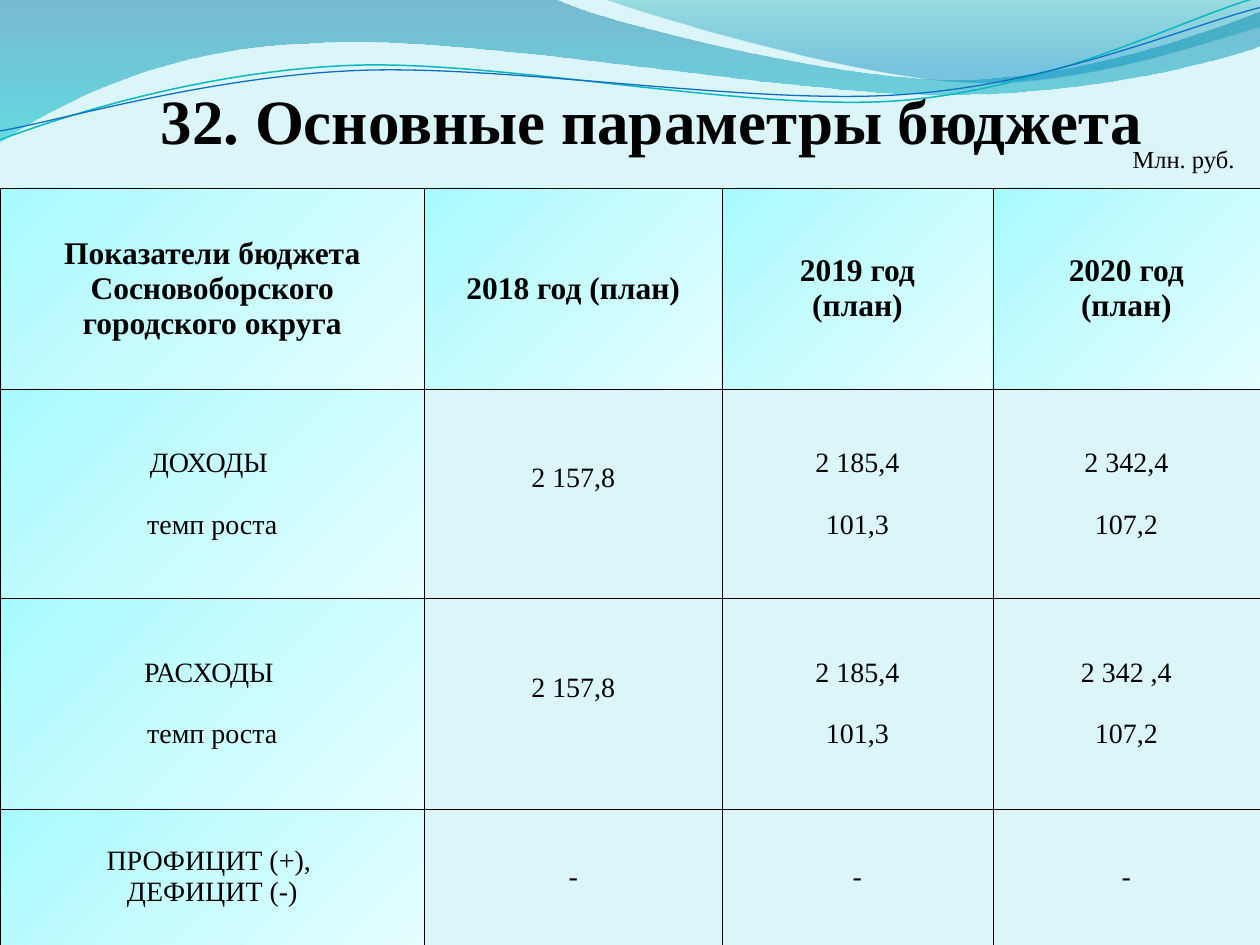
from dataclasses import dataclass
from math import cos, radians, sin

from lxml import etree
from pptx import Presentation
from pptx.dml.color import RGBColor
from pptx.enum.text import MSO_ANCHOR, PP_ALIGN
from pptx.oxml.ns import qn
from pptx.util import Inches, Pt

CENTER, LEFT = PP_ALIGN.CENTER, PP_ALIGN.LEFT
TOP, MIDDLE, BOTTOM = MSO_ANCHOR.TOP, MSO_ANCHOR.MIDDLE, MSO_ANCHOR.BOTTOM
WIDTH, HEIGHT = 10, 7.5


@dataclass(frozen=True)
class Theme:
    font: str = "Times New Roman"
    text: str = "000000"
    background: str = "DBF5F9"
    border: str = "000000"
    border_width: float = 0.25
    title_size: int = 36
    header_size: int = 18
    body_size: int = 16
    unit_size: int = 14
    # Gradient stops: position %, colour, opacity %
    cell: tuple = ((0, "A7FAFF", 100), (50, "C9FCFF", 100), (100, "E4FDFF", 100))
    left_wave: tuple = ((0, "0074A1", 45), (100, "00C6CF", 55))
    right_wave: tuple = ((0, "00A1A9", 30), (80, "008BBF", 45))
    teal_line: str = "0AB8BF"
    blue_line: str = "0F6FC6"


THEME = Theme()

# Content: each cell is a list of lines
TITLE = "32. Основные параметры бюджета"
UNIT = "Млн. руб."
HEADER = [["Показатели бюджета Сосновоборского городского округа"],
          ["2018 год (план)"], ["2019 год", "(план)"], ["2020 год", "(план)"]]
GROWTH_ROWS = [
    [["ДОХОДЫ ", "темп роста"], ["2 157,8"], ["2 185,4", "101,3"], ["2 342,4", "107,2"]],
    [["РАСХОДЫ ", "темп роста"], ["2 157,8"], ["2 185,4", "101,3"], ["2 342 ,4", "107,2"]],
]
BALANCE = [["ПРОФИЦИТ (+), ", "ДЕФИЦИТ (-)"], ["-"], ["-"], ["-"]]
TABLE_TOP = 1.49
COLUMNS = [3.37, 2.36, 2.15, 2.12]
ROWS = [1.6, 1.66, 1.67, 1.08]
GROWTH_GAP = 17.5   # points between an amount and its growth rate
SINGLE_LIFT = 0.25  # inches kept free under an amount without a growth rate

# Waves: a pair is a straight segment, six numbers are a Bezier segment
WAVES = [
    (THEME.left_wave, [
        (0, 0), (4.4, -0.01), (4.76, 0.17, 6.64, 0.63, 7.58, 0.63),
        (8.53, 0.63, 9.58, 0.26, 10, 0.09), (10.01, 0.36),
        (9.83, 0.44, 8.7, 0.76, 7.46, 0.75), (6.22, 0.75, 3.82, 0.28, 2.57, 0.34),
        (1.29, 0.36, 0.46, 0.83, -0.01, 1.13), (0, 0)]),
    (THEME.right_wave, [
        (4.79, -0.01), (5.09, 0.11, 6.82, 0.62, 7.69, 0.65),
        (8.56, 0.69, 9.61, 0.32, 10, 0.21), (10, 0), (4.79, -0.01)]),
]
LINE_TILT = -2.7
LINES = [
    (THEME.teal_line, 0.85, [
        (0, 1.11), (0.48, 0.93, 1.58, 0.57, 2.77, 0.52),
        (3.95, 0.47, 5.93, 0.89, 7.13, 0.8), (8.33, 0.71, 9.38, 0.15, 9.98, -0.02)]),
    (THEME.blue_line, 0.75, [
        (0, 1.04), (0.47, 0.96, 1.64, 0.61, 2.83, 0.56),
        (4.03, 0.51, 5.97, 0.84, 7.17, 0.75), (8.36, 0.67, 9.41, 0.21, 10, 0.06)]),
]


def color(value):
    return RGBColor.from_string(value)


def gradient(stops, angle):
    fill = etree.Element(qn("a:gradFill"), rotWithShape="1")
    stop_list = etree.SubElement(fill, qn("a:gsLst"))
    for position, value, opacity in stops:
        stop = etree.SubElement(stop_list, qn("a:gs"), pos=str(position * 1000))
        shade = etree.SubElement(stop, qn("a:srgbClr"), val=value)
        etree.SubElement(shade, qn("a:alpha"), val=str(opacity * 1000))
    etree.SubElement(fill, qn("a:lin"), ang=str(angle * 60000), scaled="0")
    return fill


def turn(point, center, degrees):
    c, s = cos(radians(degrees)), sin(radians(degrees))
    x, y = point[0] - center[0], point[1] - center[1]
    return center[0] + x * c - y * s, center[1] + x * s + y * c


def add_curve(page, segments, closed, tilt=0):
    """Draw the segments; a tilted curve is laid level first, then rotated."""
    center = (WIDTH / 2, 0.58)
    groups = [[tuple(map(Inches, turn(segment[i:i + 2], center, -tilt)))
               for i in range(0, len(segment), 2)] for segment in segments]
    ends = [group[-1] for group in groups]
    builder = page.shapes.build_freeform(*ends[0])
    builder.add_line_segments(ends[1:], close=closed)
    curve = builder.convert_to_shape()
    left, top = (min(axis) for axis in zip(*ends))
    for straight, group in zip(list(curve._element.iter(qn("a:lnTo"))), groups[1:]):
        if len(group) == 3:
            bend = etree.Element(qn("a:cubicBezTo"))
            for x, y in group:
                etree.SubElement(bend, qn("a:pt"), x=str(x - left), y=str(y - top))
            straight.getparent().replace(straight, bend)
    curve.rotation = tilt
    curve.shadow.inherit = False
    curve.fill.background()
    return curve


def write(frame, lines, size, bold=False, align=CENTER, gap=0):
    frame.word_wrap = True
    for index, line in enumerate(lines):
        para = frame.add_paragraph() if index else frame.paragraphs[0]
        para.alignment = align
        if index:
            para.space_before = Pt(gap)
        span = para.add_run()
        span.text = line
        span.font.name, span.font.size, span.font.bold = THEME.font, Pt(size), bold
        span.font.color.rgb = color(THEME.text)


def add_text(page, text, place, anchor=TOP, margins=(0.1, 0.05, 0.1, 0.05), **style):
    frame = page.shapes.add_textbox(*map(Inches, place)).text_frame
    frame.vertical_anchor = anchor
    (frame.margin_left, frame.margin_top,
     frame.margin_right, frame.margin_bottom) = map(Inches, margins)
    write(frame, [text], **style)


def style_cell(cell, shaded):
    cell.vertical_anchor = MIDDLE
    properties = cell._tc.get_or_add_tcPr()
    for side in ("lnL", "lnR", "lnT", "lnB"):
        edge = etree.SubElement(properties, qn(f"a:{side}"), w=str(Pt(THEME.border_width)))
        solid = etree.SubElement(edge, qn("a:solidFill"))
        etree.SubElement(solid, qn("a:srgbClr"), val=THEME.border)
    if shaded:
        properties.append(gradient(THEME.cell, 45))
    else:
        cell.fill.background()


def add_budget_table(page):
    rows = [HEADER, *GROWTH_ROWS, BALANCE]
    table = page.shapes.add_table(len(ROWS), len(COLUMNS), 0, Inches(TABLE_TOP),
                                  Inches(sum(COLUMNS)), Inches(sum(ROWS))).table
    table.first_row = table.horz_banding = False
    for column, width in zip(table.columns, COLUMNS):
        column.width = Inches(width)
    for row, height in zip(table.rows, ROWS):
        row.height = Inches(height)
    for r, row in enumerate(rows):
        header, growth = row is HEADER, row in GROWTH_ROWS
        for c, lines in enumerate(row):
            cell = table.cell(r, c)
            style_cell(cell, shaded=header or c == 0)
            write(cell.text_frame, lines, bold=header,
                  size=THEME.header_size if header else THEME.body_size,
                  gap=GROWTH_GAP if growth else 0)
            if growth and len(lines) == 1:
                cell.margin_bottom = Inches(0.05 + SINGLE_LIFT)


def main():
    deck = Presentation()
    deck.slide_width, deck.slide_height = Inches(WIDTH), Inches(HEIGHT)
    page = deck.slides.add_slide(deck.slide_layouts[6])
    page.background.fill.solid()
    page.background.fill.fore_color.rgb = color(THEME.background)

    # Waves and lines along the top
    for stops, segments in WAVES:
        wave = add_curve(page, segments, closed=True)
        wave.line.fill.background()
        properties = wave._element.spPr
        properties.replace(properties.find(qn("a:noFill")), gradient(stops, 90))
    for value, width, segments in LINES:
        line = add_curve(page, segments, closed=False, tilt=LINE_TILT).line
        line.color.rgb, line.width = color(value), Pt(width)

    # Title, table and unit of measure
    add_text(page, TITLE, (0.67, 0, 9, 1.25), anchor=BOTTOM, margins=(0, 0.05, 0, 0),
             size=THEME.title_size, bold=True)
    add_budget_table(page)
    add_text(page, UNIT, (8.89, 1.09, 1.11, 0.34), size=THEME.unit_size, align=LEFT)
    deck.save("out.pptx")


if __name__ == "__main__":
    main()
